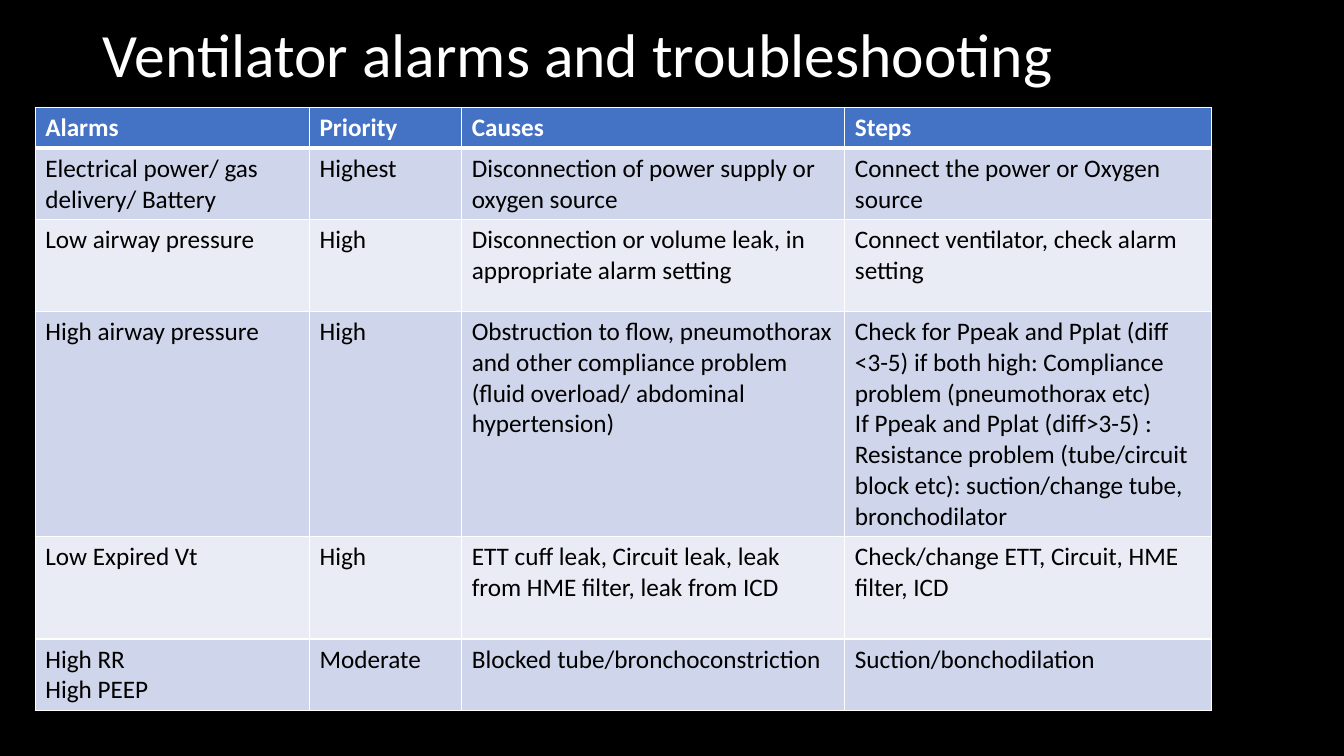
from lxml.etree import SubElement
from pptx import Presentation
from pptx.dml.color import RGBColor as RGB
from pptx.enum.text import MSO_ANCHOR as Anchor
from pptx.oxml.ns import qn
from pptx.util import Inches, Pt

# Content: one tuple per table row; a line break starts a new paragraph
TITLE = "Ventilator alarms and troubleshooting"
ROWS = [
    ("Alarms", "Priority", "Causes", "Steps"),
    ("Electrical power/ gas delivery/ Battery", "Highest",
     "Disconnection of power supply or oxygen source",
     "Connect the power or Oxygen source"),
    ("Low airway pressure", "High",
     "Disconnection or volume leak, in appropriate alarm setting",
     "Connect ventilator, check alarm setting"),
    ("High airway pressure", "High",
     "Obstruction to flow, pneumothorax and other compliance problem "
     "(fluid overload/ abdominal hypertension)",
     "Check for Ppeak and Pplat (diff <3-5) if both high: Compliance problem "
     "(pneumothorax etc)\n"
     "If Ppeak and Pplat (diff>3-5) : Resistance problem (tube/circuit block "
     "etc): suction/change tube, bronchodilator"),
    ("Low Expired Vt", "High",
     "ETT cuff leak, Circuit leak, leak from HME filter, leak from ICD",
     "Check/change ETT, Circuit, HME filter, ICD"),
    ("High RR\nHigh PEEP", "Moderate", "Blocked tube/bronchoconstriction",
     "Suction/bonchodilation"),
]

# Grid in inches, and colours
COL_WIDTHS = [2.72, 1.51, 3.8, 3.64]
ROW_HEIGHTS = [0.4, 0.71, 0.91, 2.23, 1.02, 0.71]
BLACK = RGB(0x00, 0x00, 0x00)
WHITE = RGB(0xFF, 0xFF, 0xFF)
HEADER = RGB(0x44, 0x72, 0xC4)
BANDS = [RGB(0xE9, 0xEB, 0xF5), RGB(0xCF, 0xD5, 0xEA)]


def write(tf, text, size=18, color=BLACK, bold=False, spacing=None):
    tf.word_wrap = True
    for i, line in enumerate(text.split("\n")):
        p = tf.paragraphs[0] if i == 0 else tf.add_paragraph()
        p.line_spacing = spacing
        r = p.add_run()
        r.text = line
        r.font.name, r.font.size, r.font.bold = "Calibri", Pt(size), bold
        r.font.color.rgb = color


def set_borders(cell, top=1, bottom=1):
    tc_pr = cell._tc.get_or_add_tcPr()
    for side, width in zip("LRTB", (1, 1, top, bottom)):
        ln = SubElement(tc_pr, qn(f"a:ln{side}"), w=str(Pt(width)))
        SubElement(SubElement(ln, qn("a:solidFill")), qn("a:srgbClr"), val=str(WHITE))


def main():
    prs = Presentation()
    prs.slide_width, prs.slide_height = Inches(13.33), Inches(7.5)
    slide = prs.slides.add_slide(prs.slide_layouts[6])
    slide.background.fill.solid()
    slide.background.fill.fore_color.rgb = BLACK

    # Title
    tf = slide.shapes.add_textbox(
        Inches(0.92), Inches(0.04), Inches(10.9), Inches(1.07)).text_frame
    tf.vertical_anchor = Anchor.MIDDLE
    write(tf, TITLE, size=44, color=WHITE, spacing=0.9)

    # Alarm table
    table = slide.shapes.add_table(
        len(ROWS), len(COL_WIDTHS), Inches(0.35), Inches(1.07),
        Inches(sum(COL_WIDTHS)), Inches(sum(ROW_HEIGHTS))).table
    for column, width in zip(table.columns, COL_WIDTHS):
        column.width = Inches(width)
    for i, (texts, height) in enumerate(zip(ROWS, ROW_HEIGHTS)):
        table.rows[i].height = Inches(height)
        header = i == 0
        for j, text in enumerate(texts):
            cell = table.cell(i, j)
            set_borders(cell, top=3 if i == 1 else 1, bottom=3 if header else 1)
            cell.fill.solid()
            cell.fill.fore_color.rgb = HEADER if header else BANDS[i % 2]
            write(cell.text_frame, text, color=WHITE if header else BLACK, bold=header)

    prs.save("out.pptx")


if __name__ == "__main__":
    main()
